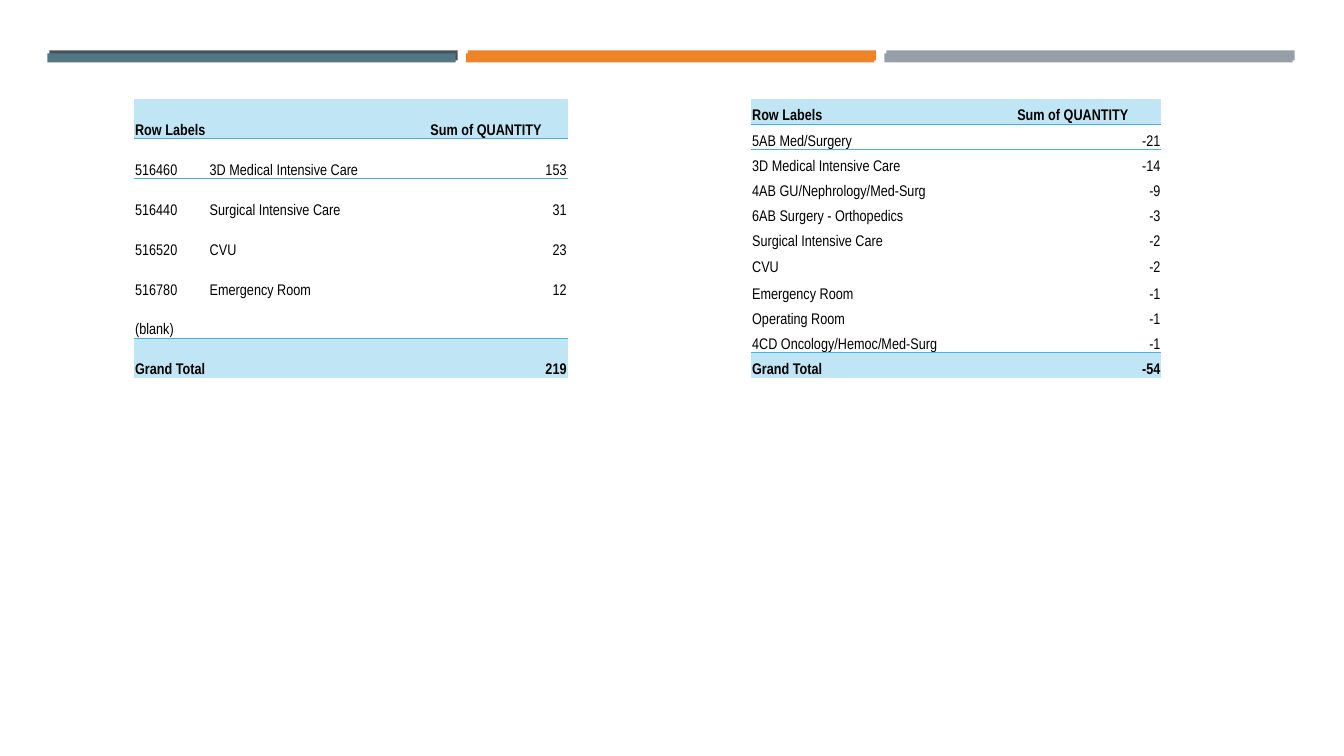
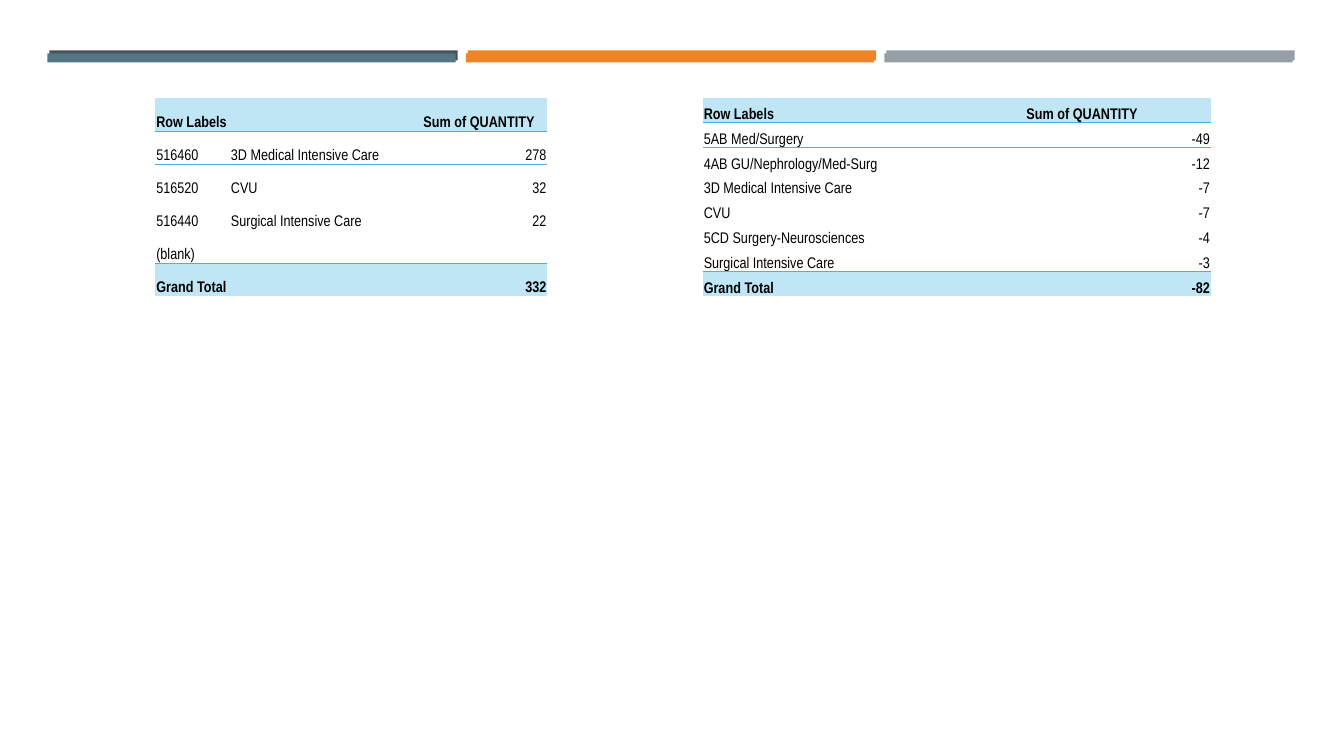
import pptx
import pptx.dml.color
import pptx.enum.shapes
import pptx.enum.text
import pptx.oxml
import pptx.oxml.ns
import pptx.util

Inches = pptx.util.Inches
COLORS = {
    "slate": "465359", "teal": "537685", "orange": "ED8428", "gray": "969FA7",
    "header": "C0E6F5", "rule": "44B3E1", "text": "000000",
}
FONT = {"name": "Arial Narrow", "size": pptx.util.Pt(11)}
CELL = {
    "margin_left": Inches(0.01), "margin_right": Inches(0.01),
    "margin_top": Inches(0.01), "margin_bottom": 0,
    "vertical_anchor": pptx.enum.text.MSO_ANCHOR.BOTTOM,
}
PLAIN_TABLE_STYLE = "{2D5ABB26-0587-4C30-8999-92F81FD0307C}"
CODE_WIDTH = 0.74
BAND_WIDTH, BAND_STEP = 4.05, 4.15

# Each table: box (left, top, width, height), first column width, data rows, total.
# A tab parts a code from its unit; tall_rows lists rows of their own height.
SLIDES = [
    [
        {"box": (1.33, 0.98, 4.3, 2.77), "label_width": 2.93, "total": "219", "rows": [
            ("516460\t3D Medical Intensive Care", "153"),
            ("516440\tSurgical Intensive Care", "31"),
            ("516520\tCVU", "23"),
            ("516780\tEmergency Room", "12"),
            ("(blank)", "")]},
        {"box": (7.45, 0.98, 4.07, 2.77), "label_width": 2.63, "total": "-54",
         "tall_rows": {7: 0.27}, "rows": [
            ("5AB Med/Surgery", "-21"),
            ("3D Medical Intensive Care", "-14"),
            ("4AB GU/Nephrology/Med-Surg", "-9"),
            ("6AB Surgery - Orthopedics", "-3"),
            ("Surgical Intensive Care", "-2"),
            ("CVU", "-2"),
            ("Emergency Room", "-1"),
            ("Operating Room", "-1"),
            ("4CD Oncology/Hemoc/Med-Surg", "-1")]},
    ],
    [
        {"box": (1.54, 0.97, 3.89, 1.97), "label_width": 2.65, "total": "332", "rows": [
            ("516460\t3D Medical Intensive Care", "278"),
            ("516520\tCVU", "32"),
            ("516440\tSurgical Intensive Care", "22"),
            ("(blank)", "")]},
        {"box": (6.97, 0.97, 5.04, 1.97), "label_width": 3.2, "total": "-82", "rows": [
            ("5AB Med/Surgery", "-49"),
            ("4AB GU/Nephrology/Med-Surg", "-12"),
            ("3D Medical Intensive Care", "-7"),
            ("CVU", "-7"),
            ("5CD Surgery-Neurosciences", "-4"),
            ("Surgical Intensive Care", "-3")]},
    ],
]


def rgb(name):
    return pptx.dml.color.RGBColor.from_string(COLORS[name])


def set_attributes(target, values):
    for name, value in values.items():
        setattr(target, name, value)


def add_bands(slide, layout):
    """Draw the back and front rows of bands and move them to the layout."""
    for placeholder in list(layout.placeholders):
        layout.shapes.element.remove(placeholder.element)
    band_rows = [(0.49, 0.5, 0.1, ("slate", "orange", "gray")),
                 (0.47, 0.53, 0.09, ("teal", "orange", "gray"))]
    for left, top, height, names in band_rows:
        for index, name in enumerate(names):
            band = slide.shapes.add_shape(
                pptx.enum.shapes.MSO_SHAPE.RECTANGLE, Inches(left + index * BAND_STEP),
                Inches(top), Inches(BAND_WIDTH), Inches(height))
            band.shadow.inherit = False
            band.fill.solid()
            band.fill.fore_color.rgb = rgb(name)
            band.line.fill.background()
            # Ids stay unique because the slide's own numbering restarts
            band.element.nvSpPr.cNvPr.set("id", str(len(layout.shapes) + 2))
            layout.shapes.element.append(band.element)


def add_rule(cell, side):
    """Draw a thin border on one side: lnT or lnB."""
    cell.fill.background()
    cell._tc.get_or_add_tcPr().insert(0, pptx.oxml.parse_xml(
        f'<a:{side} {pptx.oxml.ns.nsdecls("a")} w="6350"><a:solidFill>'
        f'<a:srgbClr val="{COLORS["rule"]}"/></a:solidFill></a:{side}>'))


def add_tab_stop(paragraph):
    paragraph._p.get_or_add_pPr().append(pptx.oxml.parse_xml(
        f'<a:tabLst {pptx.oxml.ns.nsdecls("a")}>'
        f'<a:tab pos="{Inches(CODE_WIDTH)}" algn="l"/></a:tabLst>'))


def fill_cell(cell, text, bold, right):
    set_attributes(cell, CELL)
    paragraph = cell.text_frame.paragraphs[0]
    if right:
        paragraph.alignment = pptx.enum.text.PP_ALIGN.RIGHT
    if "\t" in text:
        add_tab_stop(paragraph)
    if text:
        run = paragraph.add_run()
        run.text = text
        set_attributes(run.font, {**FONT, "bold": bold})
        run.font.color.rgb = rgb("text")


def add_quantity_table(slide, box, label_width, rows, total, tall_rows=None):
    tall_rows = tall_rows or {}
    lines = [("Row Labels", "Sum of QUANTITY"), *rows, ("Grand Total", total)]
    last = len(lines) - 1
    left, top, width, height = box
    frame = slide.shapes.add_table(len(lines), 2, *map(Inches, box))
    table = frame.table
    set_attributes(table, {"first_row": False, "horz_banding": False})
    table._tbl.tblPr.find(pptx.oxml.ns.qn("a:tableStyleId")).text = PLAIN_TABLE_STYLE

    # Columns and rows
    table.columns[0].width = Inches(label_width)
    table.columns[1].width = Inches(width - label_width)
    row_height = (height - sum(tall_rows.values())) / (len(lines) - len(tall_rows))
    for index, row in enumerate(table.rows):
        row.height = Inches(tall_rows.get(index, row_height))

    # Cells: header and total are tinted and ruled off from the data
    for row_index, line in enumerate(lines):
        edge = row_index in (0, last)
        for column, text in enumerate(line):
            cell = table.cell(row_index, column)
            fill_cell(cell, text, edge, column == 1 and row_index > 0)
            if row_index in (0, last - 1):
                add_rule(cell, "lnB")
            if row_index in (1, last):
                add_rule(cell, "lnT")
            if edge:
                cell.fill.solid()
                cell.fill.fore_color.rgb = rgb("header")


def main():
    presentation = pptx.Presentation()
    presentation.slide_width = Inches(13.33)
    presentation.slide_height = Inches(7.5)
    layout = presentation.slide_layouts[6]
    for index, tables in enumerate(SLIDES):
        slide = presentation.slides.add_slide(layout)
        if index == 0:
            add_bands(slide, layout)
        for table in tables:
            add_quantity_table(slide, **table)
    presentation.save("out.pptx")


if __name__ == "__main__":
    main()
